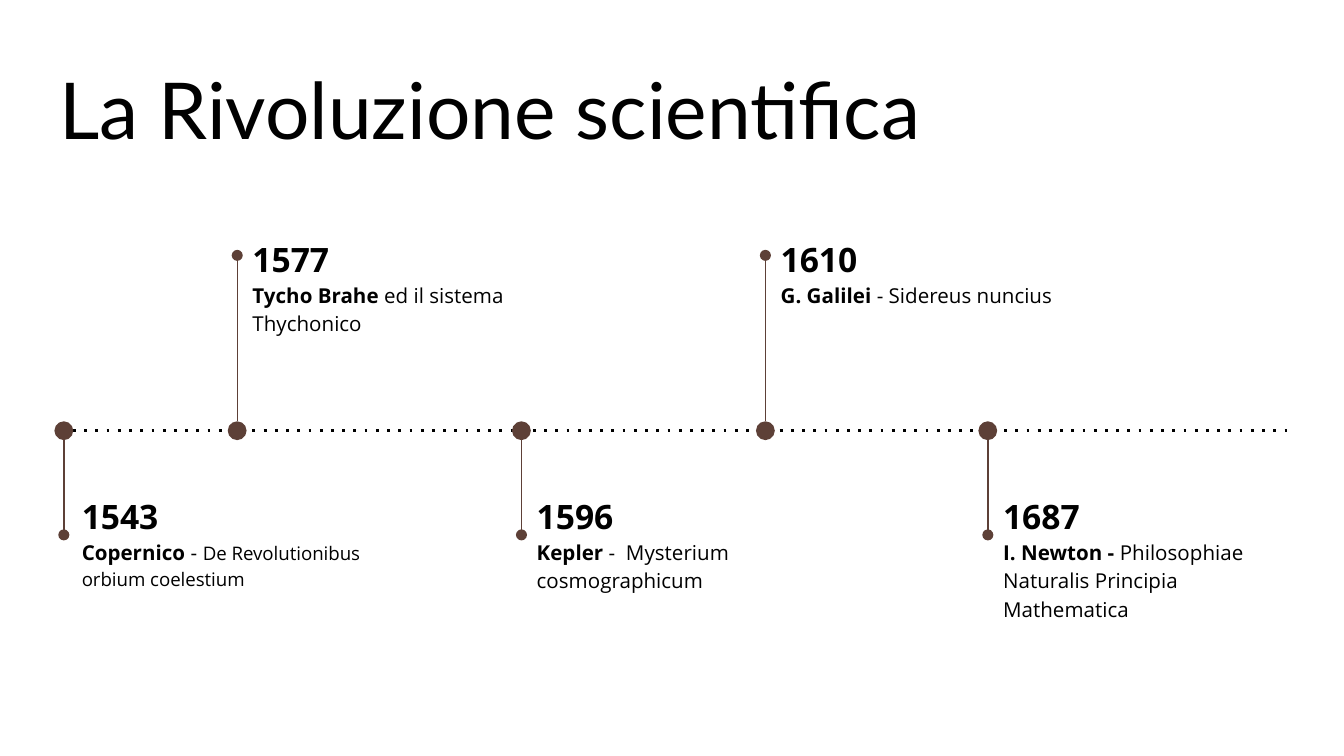
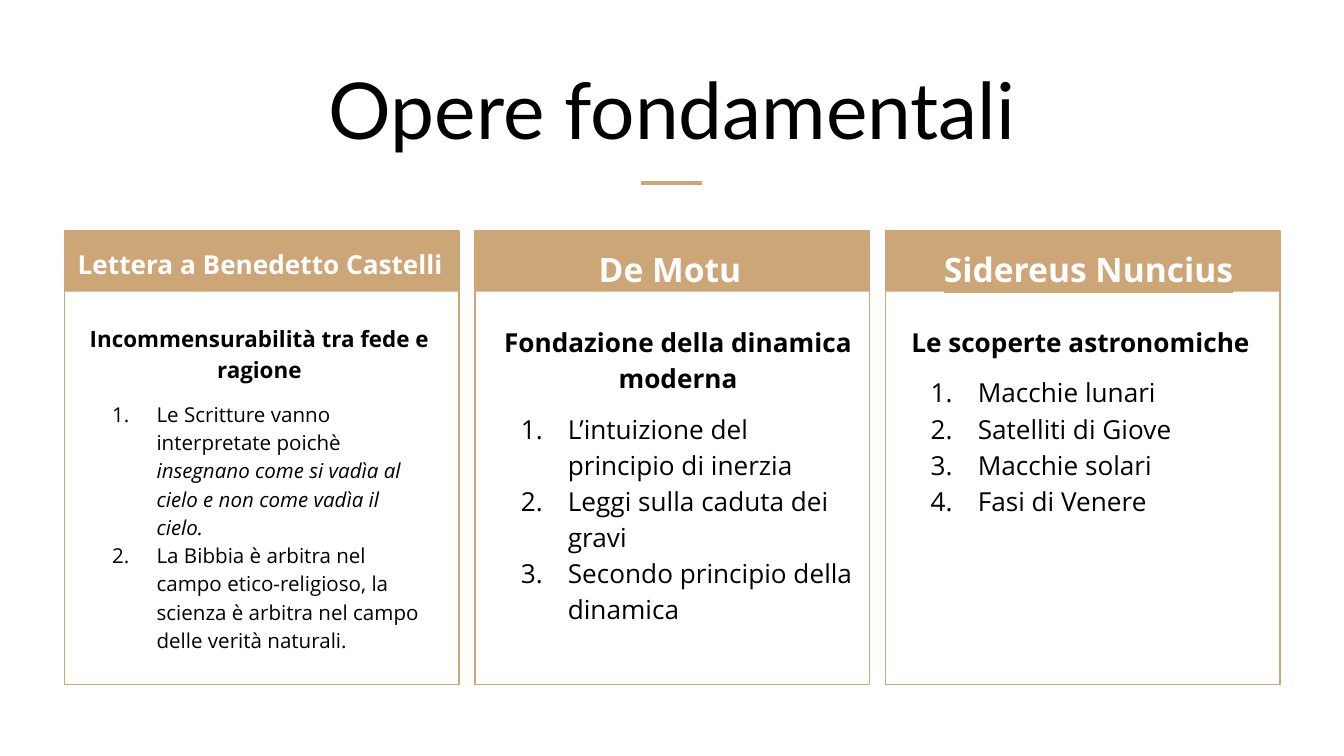
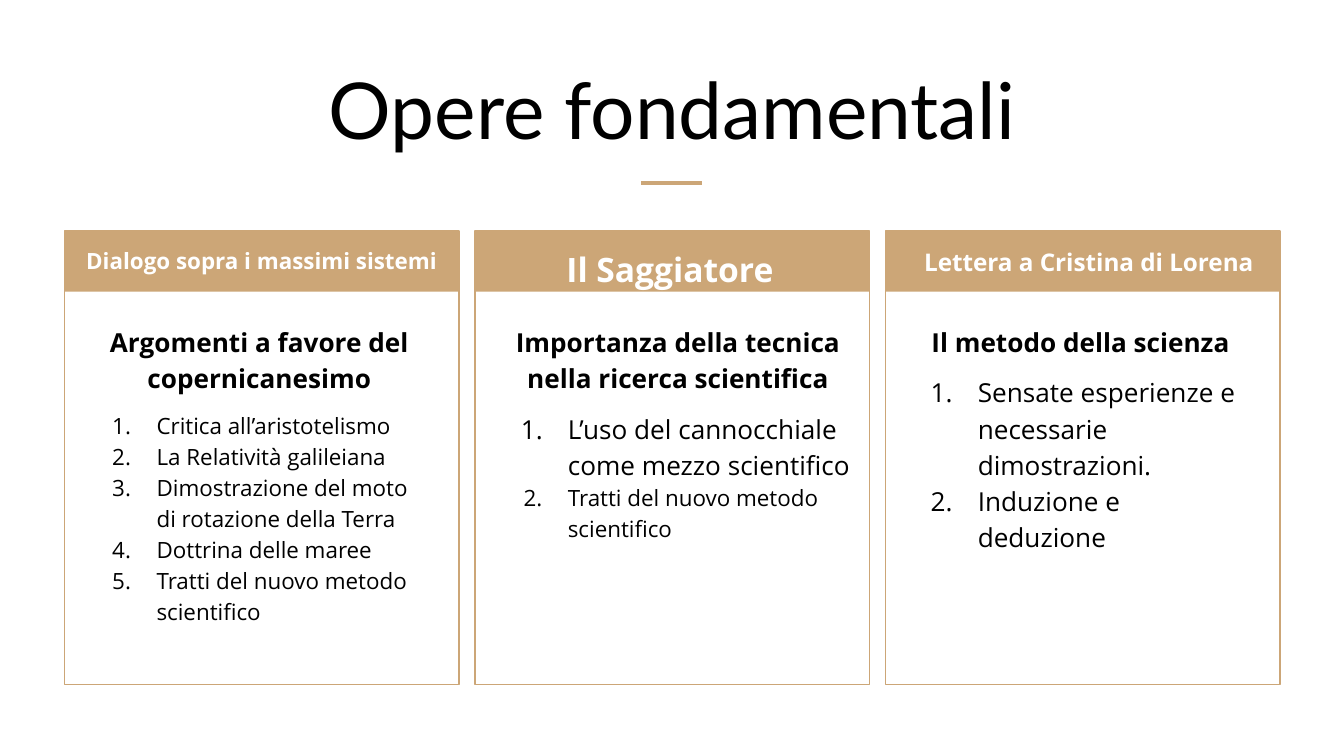
from lxml.etree import SubElement
from pptx import Presentation
from pptx.dml.color import RGBColor
from pptx.enum.shapes import MSO_CONNECTOR, MSO_SHAPE
from pptx.enum.text import MSO_ANCHOR, MSO_AUTO_SIZE, PP_ALIGN
from pptx.oxml.ns import qn
from pptx.util import Emu, Pt

# Shared scale, colours and fonts
PX = 4572  # 200 px to the inch
COLORS = {"text": "000000", "white": "FFFFFF", "tan": "CCA677", "brown": "5D4037"}
TITLE_FONT, BODY_FONT = "Lato", "Open Sans"
SLIDE_SIZE = (2000, 1125)
TITLE_BOX = (68, 69, 1864, 182)
COMPARISON_LAYOUT, TITLE_ONLY_LAYOUT = 4, 5

# Timeline: year, spine x, gap to label, side, runs
AXIS_Y = 641
EVENTS = [
    ("1543", 95, 7, "below", [("Copernico", {"bold": True}), (" - ", {}),
                              ("De Revolutionibus orbium coelestium", {"size": Pt(10)})]),
    ("1577", 353, 3, "above", [("Tycho Brahe", {"bold": True}), (" ed il sistema Thychonico", {})]),
    ("1596", 776, 3, "below", [("Kepler", {"bold": True}), (" -  Mysterium cosmographicum", {})]),
    ("1610", 1139, 3, "above", [("G. Galilei", {"bold": True}), (" - Sidereus nuncius", {})]),
    ("1687", 1470, 3, "below", [("I. Newton - ", {"bold": True}),
                                ("Philosophiae Naturalis Principia Mathematica", {})]),
]
# Spine start, spine end, label top and label height, relative to the axis
SIDES = {"above": (-14, -261, -314, 240), "below": (14, 155, 68, 264)}
DOT_RADIUS, LABEL_WIDTH = 14, 476

# Cards: header and list as (left offset, width) for each column
CARD_LEFT, CARD_PITCH = 96, 611
CARD_TOP, CARD_WIDTH, CARD_HEIGHT, BAND_HEIGHT = 344, 587, 675, 90
COLUMNS = [((0, 587), (17, 546)), ((18, 544), (18, 568)), ((18, 568), (17, 546))]
HEADER_EXTRAS = [{}, {}, {"highlight": "tan"}]

# Card: header, header size, heading, heading size, list of (size, runs)
WORKS_EARLY = [
    ("Lettera a Benedetto Castelli", 14, "Incommensurabilità tra fede e ragione", 12, [
        (11, [("Le Scritture vanno interpretate poichè ", {}),
              ("insegnano come si vadìa al cielo e non come vadìa il cielo.", {"italic": True})]),
        (11, [("La Bibbia è arbitra nel campo etico-religioso, la scienza è arbitra "
               "nel campo delle verità naturali.", {})]),
    ]),
    ("De Motu", 18, "Fondazione della dinamica moderna", 14, [
        (14, [("L’intuizione del  principio di inerzia", {})]),
        (14, [("Leggi sulla caduta dei gravi", {})]),
        (14, [("Secondo principio della dinamica", {})]),
    ]),
    ("Sidereus Nuncius", 18, "Le scoperte astronomiche", 14, [
        (14, [("Macchie lunari", {})]),
        (14, [("Satelliti di Giove", {})]),
        (14, [("Macchie solari", {})]),
        (14, [("Fasi di Venere", {})]),
    ]),
]
WORKS_LATE = [
    ("Dialogo sopra i massimi sistemi", 12, "Argomenti a favore del copernicanesimo", 14, [
        (12, [("Critica all’aristotelismo", {})]),
        (12, [("La Relatività galileiana", {})]),
        (12, [("Dimostrazione del moto di rotazione della Terra", {})]),
        (12, [("Dottrina delle maree", {})]),
        (12, [("Tratti del nuovo metodo scientifico", {})]),
    ]),
    ("Il Saggiatore", 18, "Importanza della tecnica nella ricerca scientifica", 14, [
        (14, [("L’uso del cannocchiale come mezzo scientifico", {})]),
        (12, [("Tratti del nuovo metodo scientifico", {})]),
    ]),
    ("Lettera a Cristina di Lorena", 13, "Il metodo della scienza", 14, [
        (14, [("Sensate esperienze e necessarie dimostrazioni.", {})]),
        (14, [("Induzione e deduzione", {})]),
    ]),
]


def rgb(name):
    return RGBColor.from_string(COLORS[name])


def px(*values):
    return [Emu(value * PX) for value in values]


def set_attributes(target, values):
    for name, value in values.items():
        setattr(target, name, value)


# Text helpers
def prepare_text(shape, box, anchor=MSO_ANCHOR.TOP):
    left, top, width, height = px(*box)
    set_attributes(shape, {"left": left, "top": top, "width": width, "height": height})
    inset = Emu(20 * PX)
    set_attributes(shape.text_frame, {
        "word_wrap": True, "auto_size": MSO_AUTO_SIZE.NONE, "vertical_anchor": anchor,
        "margin_left": inset, "margin_right": inset,
        "margin_top": inset, "margin_bottom": inset})
    return shape.text_frame


def add_label(slide, box):
    return prepare_text(slide.shapes.add_textbox(*px(*box)), box)


def write_paragraph(frame, runs, size, first=False, color="text", font=BODY_FONT,
                    align=PP_ALIGN.LEFT, spacing=1.15, before=0):
    paragraph = frame.paragraphs[0] if first else frame.add_paragraph()
    set_attributes(paragraph, {"alignment": align, "line_spacing": spacing,
                               "space_before": Pt(before), "space_after": Pt(0)})
    for text, extras in runs:
        run = paragraph.add_run()
        run.text = text
        run.font.color.rgb = rgb(color)
        values = {"size": Pt(size), "name": font, "bold": False, **extras}
        highlight = values.pop("highlight", None)
        set_attributes(run.font, values)
        if highlight:
            properties = run._r.get_or_add_rPr()
            mark = SubElement(properties, qn("a:highlight"))
            SubElement(mark, qn("a:srgbClr"), val=COLORS[highlight])
            properties.find(qn("a:solidFill")).addnext(mark)
    return paragraph


def set_bullet(paragraph, indent=0, hanging=0):
    properties = paragraph._p.get_or_add_pPr()
    properties.set("marL", str(indent * PX))
    properties.set("indent", str(-hanging * PX))
    if not hanging:
        SubElement(properties, qn("a:buNone"))
        return
    color = SubElement(properties, qn("a:buClr"))
    SubElement(color, qn("a:srgbClr"), val=COLORS["text"])
    SubElement(properties, qn("a:buFont"), typeface=BODY_FONT)
    SubElement(properties, qn("a:buAutoNum"), type="arabicPeriod")


# Shape helpers
def add_box(shapes, kind, box, fill=None, line=None):
    shape = shapes.add_shape(kind, *px(*box))
    shape.shadow.inherit = False
    if fill:
        shape.fill.solid()
        shape.fill.fore_color.rgb = rgb(fill)
    else:
        shape.fill.background()
    if line:
        shape.line.color.rgb = rgb(line)
        shape.line.width = Pt(0.75)
    else:
        shape.line.fill.background()


def add_line(shapes, start, end, color, width, dash=None, tail=None):
    connector = shapes.add_connector(MSO_CONNECTOR.STRAIGHT, *px(*start, *end))
    connector.line.color.rgb = rgb(color)
    connector.line.width = Pt(width)
    outline = connector.line._get_or_add_ln()
    if dash:
        SubElement(outline, qn("a:prstDash"), val=dash)
    if tail:
        SubElement(outline, qn("a:tailEnd"), type=tail)
    SubElement(connector._element.spPr, qn("a:effectLst"))


def add_slide(presentation, layout, title, align):
    slide = presentation.slides.add_slide(presentation.slide_layouts[layout])
    frame = prepare_text(slide.shapes.title, TITLE_BOX, MSO_ANCHOR.BOTTOM)
    write_paragraph(frame, [(title, {})], 42, first=True, font=TITLE_FONT,
                    align=align, spacing=1.0)
    return slide


# Timeline slide
def add_event(slide, axis_y, year, x, gap, side, runs):
    start, end, label_top, label_height = SIDES[side]
    group = slide.shapes.add_group_shape()
    dot = (x - DOT_RADIUS, axis_y - DOT_RADIUS, 2 * DOT_RADIUS, 2 * DOT_RADIUS)
    add_box(group.shapes, MSO_SHAPE.OVAL, dot, fill="brown")
    add_line(group.shapes, (x, axis_y + start), (x, axis_y + end), "brown", 0.75, tail="oval")
    frame = add_label(slide, (x + gap, axis_y + label_top, LABEL_WIDTH, label_height))
    write_paragraph(frame, [(year, {"bold": True})], 18, first=True)
    write_paragraph(frame, runs, 11)


def build_timeline(presentation):
    slide = add_slide(presentation, TITLE_ONLY_LAYOUT, "La Rivoluzione scientifica", PP_ALIGN.LEFT)
    add_line(slide.shapes, (92, AXIS_Y), (1916, AXIS_Y), "text", 1.5, dash="dot")
    for event in EVENTS:
        add_event(slide, AXIS_Y, *event)


# Card slides
def add_card(slide, box, column, placeholder, card, header_align):
    left, top, width, height = box
    header, header_size, heading, heading_size, items = card
    (header_offset, header_width), (list_offset, list_width) = COLUMNS[column]

    # Frame and header band
    group = slide.shapes.add_group_shape()
    add_box(group.shapes, MSO_SHAPE.RECTANGLE, box, line="tan")
    add_box(group.shapes, MSO_SHAPE.RECTANGLE, (left, top, width, BAND_HEIGHT), fill="tan")
    frame = add_label(slide, (left + header_offset, top - 2, header_width, BAND_HEIGHT))
    write_paragraph(frame, [(header, {"bold": True, **HEADER_EXTRAS[column]})], header_size,
                    first=True, color="white", align=header_align)

    # Heading and numbered list
    frame = prepare_text(placeholder, (left + list_offset, top + 114, list_width, height - 115))
    paragraph = write_paragraph(frame, [(heading, {"bold": True})], heading_size,
                                first=True, align=PP_ALIGN.CENTER)
    set_bullet(paragraph)
    for index, (size, runs) in enumerate(items):
        paragraph = write_paragraph(frame, runs, size, before=0 if index else 8)
        set_bullet(paragraph, 100, 66 if size <= 12 else 70)


def build_works(presentation, cards, first_align):
    slide = add_slide(presentation, COMPARISON_LAYOUT, "Opere fondamentali", PP_ALIGN.CENTER)
    add_line(slide.shapes, (954, 272), (1045, 272), "tan", 2.25)
    *bodies, spare = list(slide.placeholders)[1:]
    spare._element.getparent().remove(spare._element)
    for column, (card, body) in enumerate(zip(cards, bodies)):
        box = (CARD_LEFT + column * CARD_PITCH, CARD_TOP, CARD_WIDTH, CARD_HEIGHT)
        align = PP_ALIGN.CENTER if column else first_align
        add_card(slide, box, column, body, card, align)


def main():
    presentation = Presentation()
    presentation.slide_width, presentation.slide_height = px(*SLIDE_SIZE)
    build_timeline(presentation)
    build_works(presentation, WORKS_EARLY, PP_ALIGN.LEFT)
    build_works(presentation, WORKS_LATE, PP_ALIGN.CENTER)
    presentation.save("out.pptx")


if __name__ == "__main__":
    main()
